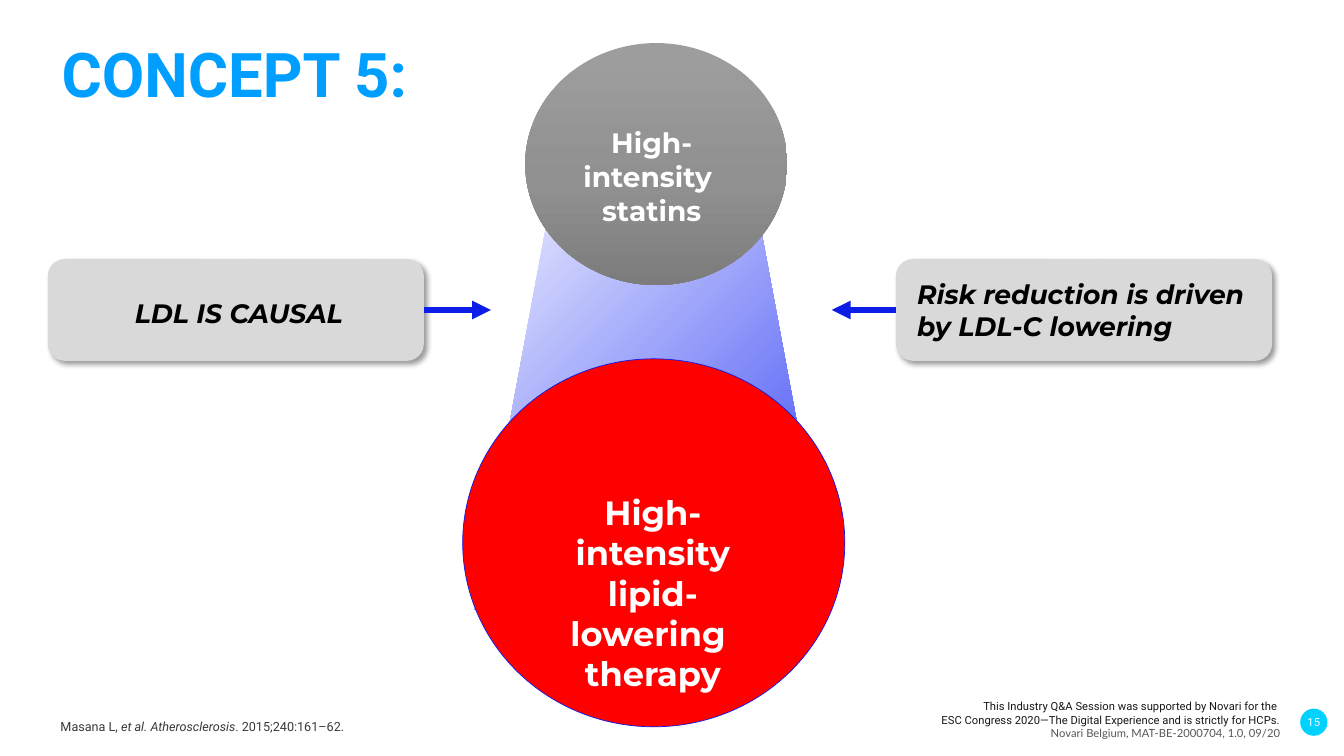
from lxml import etree
from pptx import Presentation, util as u
from pptx.dml.color import RGBColor
from pptx.enum import shapes as es, text as et
from pptx.oxml import parse_xml
from pptx.oxml.ns import qn

NS = 'xmlns:a="http://schemas.openxmlformats.org/drawingml/2006/main"'
THEME = dict(
    head="009FFF", badge="00D2FF", ink="181717", note="3B3838", code="555555",
    white="FFFFFF", black="000000", card="D9D9D9", red="FF0000", blue="0C1DE8",
    beam=[(26, "6772F7"), (100, "FFFFFF")],
    ball=[(4, "9D9D9D"), (58, "909090"), (100, "7C7C7C")],
    title=44, big=24, mid=20, call=19, ref=9, foot=8)
T = THEME
SHAPE, ALIGN, ANCHOR = es.MSO_SHAPE, et.PP_ALIGN, et.MSO_ANCHOR

deck = Presentation()
deck.slide_width, deck.slide_height = u.Inches(13.33), u.Inches(7.5)
slide = deck.slides.add_slide(deck.slide_layouts[5])
items = slide.shapes


def area(x, y, w, h):
    """Turn percent shares of the slide into lengths."""
    wide, tall = deck.slide_width / 100, deck.slide_height / 100
    return [int(v) for v in (x * wide, y * tall, w * wide, h * tall)]


def write(item, lines, align=ALIGN.LEFT, anchor=ANCHOR.TOP, pad=(0, 0, 0, 0), gap=None, wrap=True):
    """Fill an item with paragraphs, each a list of (text, format) runs."""
    frame = item.text_frame
    form = dict(word_wrap=wrap, vertical_anchor=anchor, auto_size=et.MSO_AUTO_SIZE.NONE)
    for side, size in zip(("left", "top", "right", "bottom"), pad):
        form[f"margin_{side}"] = u.Inches(size)
    for key, val in form.items():
        setattr(frame, key, val)
    for n, line in enumerate(lines):
        para = frame.add_paragraph() if n else frame.paragraphs[0]
        para.alignment, para.line_spacing = align, gap
        for words, form in line:
            if words == "\n":
                para.add_line_break()
                continue
            run = para.add_run()
            run.text = words
            for key, val in form.items():
                if key == "color":
                    run.font.color.rgb = RGBColor.from_string(val)
                else:
                    setattr(run.font, key, val)


# Text formats
roboto = dict(name="Roboto", size=u.Pt(T["foot"]), color=T["ink"])
cite = dict(roboto, size=u.Pt(T["ref"]), color=T["note"])
mont = dict(name="Montserrat", bold=True, color=T["white"])
big, mid = dict(mont, size=u.Pt(T["big"])), dict(mont, size=u.Pt(T["mid"]))
call = dict(mont, size=u.Pt(T["call"]), color=T["black"], italic=True)

# Title
title = items.title
title.left, title.top, title.width, title.height = area(4.58, 5.33, 81.17, 9.33)
write(title, [[("CONCEPT 5:", dict(roboto, size=u.Pt(T["title"]), bold=True, color=T["head"]))]],
      anchor=ANCHOR.BOTTOM, gap=0.9)

# Footer and reference
foot = items.add_textbox(*area(66.02, 92.4, 29.26, 5.47))
write(foot, [
    [("This Industry Q&A Session was supported by Novari for the ", roboto), ("\n", {}),
     ("ESC Congress 2020—The Digital Experience and is strictly for HCPs.", roboto)],
    [("Novari Belgium, MAT-BE-2000704, 1.0, 09/20", dict(roboto, name="Lato", color=T["code"]))],
], ALIGN.RIGHT, ANCHOR.BOTTOM)
ref = items.add_textbox(*area(4.5, 92.53, 60.09, 4.53))
write(ref, [[("Masana L, ", cite), ("et al. Atherosclerosis", dict(cite, italic=True)),
             (". 2015;240:161–62.", cite)]], anchor=ANCHOR.BOTTOM, gap=0.9)

# Solid and graded shapes: key, kind, area, fill, line, gradient path
forms = [
    ("badge", SHAPE.OVAL, (96.74, 93.73, 2.03, 3.6), T["badge"], None, ""),
    ("beam", SHAPE.TRAPEZOID, (35.33, 17.2, 26.56, 63.47), T["beam"], None,
     '<a:path path="circle"><a:fillToRect l="100000" t="100000"/></a:path>'),
    ("goal", SHAPE.OVAL, (34.43, 47.47, 28.43, 48.67), T["red"], T["blue"], ""),
    ("statin", SHAPE.OVAL, (39.08, 5.7, 19.5, 32), T["ball"], None,
     '<a:lin ang="5400000" scaled="0"/>'),
    ("left", SHAPE.ROUNDED_RECTANGLE, (3.56, 34.27, 27.98, 13.47), T["card"], None, ""),
    ("right", SHAPE.ROUNDED_RECTANGLE, (66.67, 34.27, 27.98, 13.47), T["card"], None, ""),
]
made = {}
for key, kind, place, fill, edge, way in forms:
    item = made[key] = items.add_shape(kind, *area(*place))
    item.shadow.inherit = False
    if edge:
        item.line.color.rgb, item.line.width = RGBColor.from_string(edge), u.Pt(0.5)
    else:
        item.line.fill.background()
    if way:
        stops = "".join(f'<a:gs pos="{p * 1000}"><a:srgbClr val="{c}"/></a:gs>' for p, c in fill)
        grad = parse_xml(f'<a:gradFill {NS} rotWithShape="1"><a:gsLst>{stops}</a:gsLst>{way}</a:gradFill>')
        item.element.spPr.find(qn("a:prstGeom")).addnext(grad)
    else:
        item.fill.solid()
        item.fill.fore_color.rgb = RGBColor.from_string(fill)

# Page number and upper circle
write(made["badge"], [[("15", dict(roboto, color=T["white"]))]], ALIGN.CENTER, ANCHOR.MIDDLE, wrap=False)
write(made["statin"], [[("High-intensity ", mid)], [("statins", mid)]], ALIGN.CENTER,
      pad=(0.03, 0.47, 0.12, 0))

# Card shadows and the arrows that point inward
for key, site, start, end in [("left", 3, 31.54, 36.53), ("right", 1, 66.67, 61.89)]:
    card = made[key]
    glow = card.element.spPr.find(qn("a:effectLst"))
    glow.append(parse_xml(
        f'<a:outerShdw {NS} blurRad="{u.Pt(4)}" dist="{u.Pt(3)}" dir="2700000" algn="tl" rotWithShape="0">'
        f'<a:srgbClr val="{T["black"]}"><a:alpha val="40000"/></a:srgbClr></a:outerShdw>'))
    x1, _, x2, _ = area(start, 0, end, 0)
    y = card.top + card.height // 2
    arrow = items.add_connector(es.MSO_CONNECTOR.STRAIGHT, x1, y, x2, y)
    arrow.begin_connect(card, site)
    arrow.line.color.rgb, arrow.line.width = RGBColor.from_string(T["blue"]), u.Pt(4.5)
    etree.SubElement(arrow.line._get_or_add_ln(), qn("a:tailEnd"), type="triangle")
    etree.SubElement(arrow.element.spPr, qn("a:effectLst"))

# Labels on the lower circle and the cards
labels = [
    ((40.06, 64.4, 17.03, 28), ["High-intensity", "lipid-lowering ", "therapy"], big, ALIGN.CENTER),
    ((9.3, 38.67, 18.45, 5.6), ["LDL IS CAUSAL"], call, ALIGN.LEFT),
    ((67.5, 36.1, 27.16, 9.87), ["Risk reduction is driven", "by LDL-C lowering"], call, ALIGN.LEFT),
]
for place, lines, form, align in labels:
    write(items.add_textbox(*area(*place)), [[(line, form)] for line in lines], align,
          pad=(0.1, 0.05, 0.1, 0.05))

deck.save("out.pptx")
